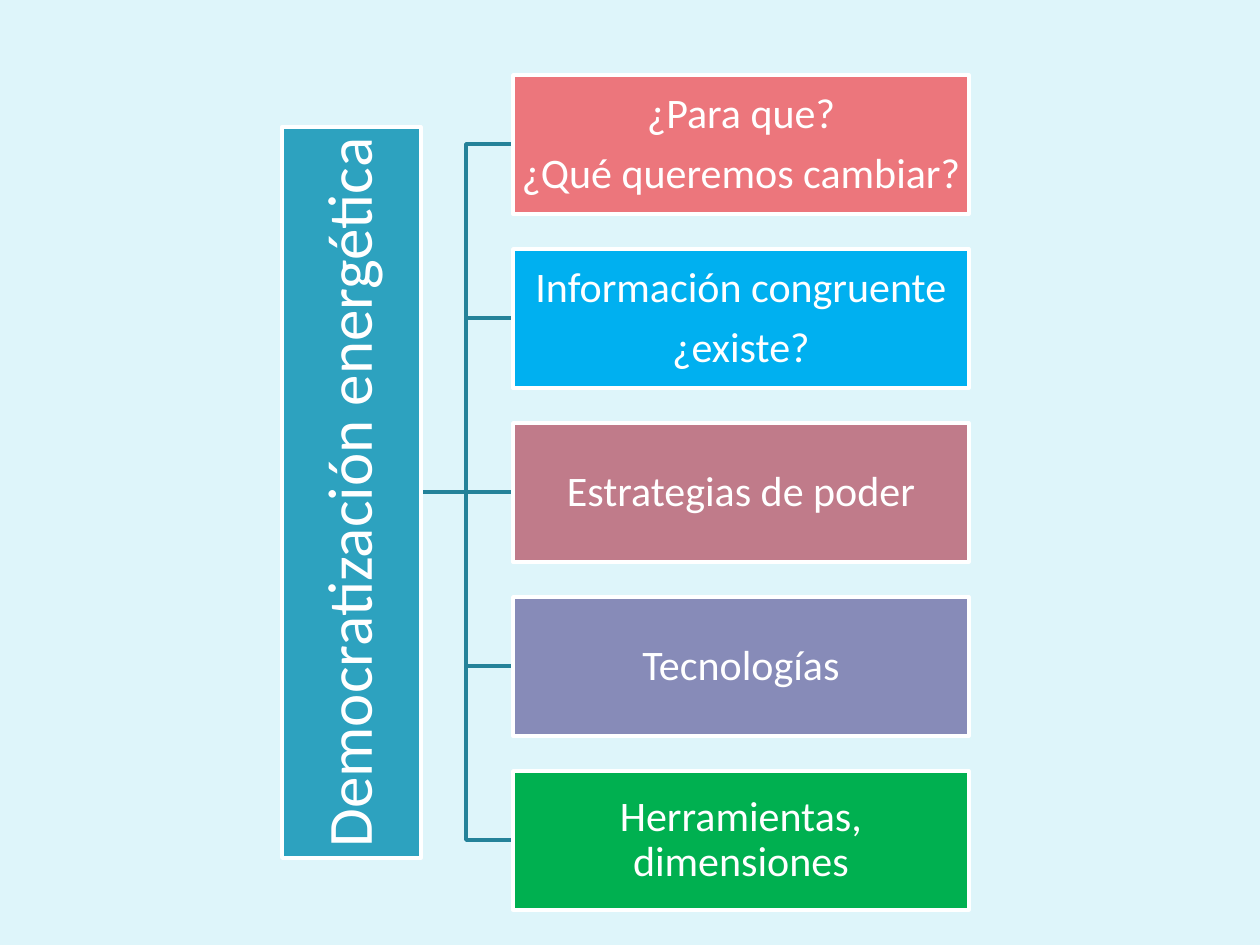
from dataclasses import dataclass

from lxml import etree
from pptx import Presentation
from pptx import util as u
from pptx.dml.color import RGBColor
from pptx.enum import shapes, text
from pptx.oxml.ns import qn

PX = u.Inches(1) / 126


@dataclass(frozen=True)
class Theme:
    background: str = "DEF5FA"
    root: str = "2DA2BF"
    branch: str = "248299"
    light: str = "FFFFFF"
    font: str = "Calibri"
    root_size: int = 36
    topic_size: int = 24
    line_width: int = 2


@dataclass(frozen=True)
class Box:
    left: int
    top: int
    width: int
    height: int
    fill: str
    size: int
    inset: int
    lines: tuple[str, ...]
    rotation: int = 0


THEME = Theme()
ROOT_RIGHT, TRUNK_X, TOPIC_LEFT = 421, 466, 513
TOPIC_TOP, TOPIC_STEP = 75, 174
TOPIC_WIDTH, BOX_HEIGHT = 456, 139
TOPICS = (
    ("EC767C", ("¿Para que?", "¿Qué queremos cambiar?")),
    ("00B0F0", ("Información congruente", "¿existe?")),
    ("C07B8A", ("Estrategias de poder",)),
    ("878BB8", ("Tecnologías",)),
    ("00B050", ("Herramientas, dimensiones",)),
)


def px(value: int) -> u.Emu:
    return u.Emu(round(value * PX))


def color(value: str) -> RGBColor:
    return RGBColor.from_string(value)


def apply(target, values: dict) -> None:
    for attribute, value in values.items():
        setattr(target, attribute, value)


def style_line(outlined, value: str) -> None:
    outlined.line.color.rgb = color(value)
    outlined.line.width = u.Pt(THEME.line_width)


def draw_box(slide, box: Box) -> None:
    panel = slide.shapes.add_shape(
        shapes.MSO_SHAPE.RECTANGLE,
        *map(px, (box.left, box.top, box.width, box.height)),
    )
    panel.rotation = box.rotation
    panel.shadow.inherit = False
    panel.fill.solid()
    panel.fill.fore_color.rgb = color(box.fill)
    style_line(panel, THEME.light)

    frame = panel.text_frame
    sides = ("left", "top", "right", "bottom")
    apply(frame, {f"margin_{side}": px(box.inset) for side in sides})
    apply(frame, {"word_wrap": True, "vertical_anchor": text.MSO_ANCHOR.MIDDLE})
    for index, line in enumerate(box.lines):
        paragraph = frame.add_paragraph() if index else frame.paragraphs[0]
        apply(paragraph, {
            "alignment": text.PP_ALIGN.CENTER,
            "line_spacing": 0.9,
            "space_after": u.Pt(0.35 * box.size),
        })
        run = paragraph.add_run()
        run.text = line
        apply(run.font, {"name": THEME.font, "size": u.Pt(box.size)})
        run.font.color.rgb = color(THEME.light)


def draw_branch(slide, start_y: int, end_y: int) -> None:
    if start_y == end_y:
        branch = slide.shapes.add_connector(
            shapes.MSO_CONNECTOR.STRAIGHT,
            *map(px, (ROOT_RIGHT, start_y, TOPIC_LEFT, end_y)),
        )
        style_line(branch, THEME.branch)
        etree.SubElement(branch._element.spPr, qn("a:effectLst"))
        return
    builder = slide.shapes.build_freeform(ROOT_RIGHT, start_y, scale=PX)
    builder.add_line_segments(
        [(TRUNK_X, start_y), (TRUNK_X, end_y), (TOPIC_LEFT, end_y)], close=False
    )
    branch = builder.convert_to_shape()
    branch.fill.background()
    branch.shadow.inherit = False
    style_line(branch, THEME.branch)


def main() -> None:
    deck = Presentation()
    apply(deck, {"slide_width": px(1260), "slide_height": px(945)})
    slide = deck.slides.add_slide(deck.slide_layouts[6])
    slide.background.fill.solid()
    slide.background.fill.fore_color.rgb = color(THEME.background)

    topics = [
        Box(TOPIC_LEFT, TOPIC_TOP + row * TOPIC_STEP, TOPIC_WIDTH, BOX_HEIGHT,
            fill, THEME.topic_size, 2, lines)
        for row, (fill, lines) in enumerate(TOPICS)
    ]
    middle = topics[len(topics) // 2]
    root = Box(-14, middle.top, 731, BOX_HEIGHT, THEME.root, THEME.root_size, 4,
               ("Democratización energética",), rotation=270)

    half = BOX_HEIGHT // 2
    for topic in reversed(topics):
        draw_branch(slide, middle.top + half, topic.top + half)
    for box in (root, *topics):
        draw_box(slide, box)
    deck.save("out.pptx")


if __name__ == "__main__":
    main()
